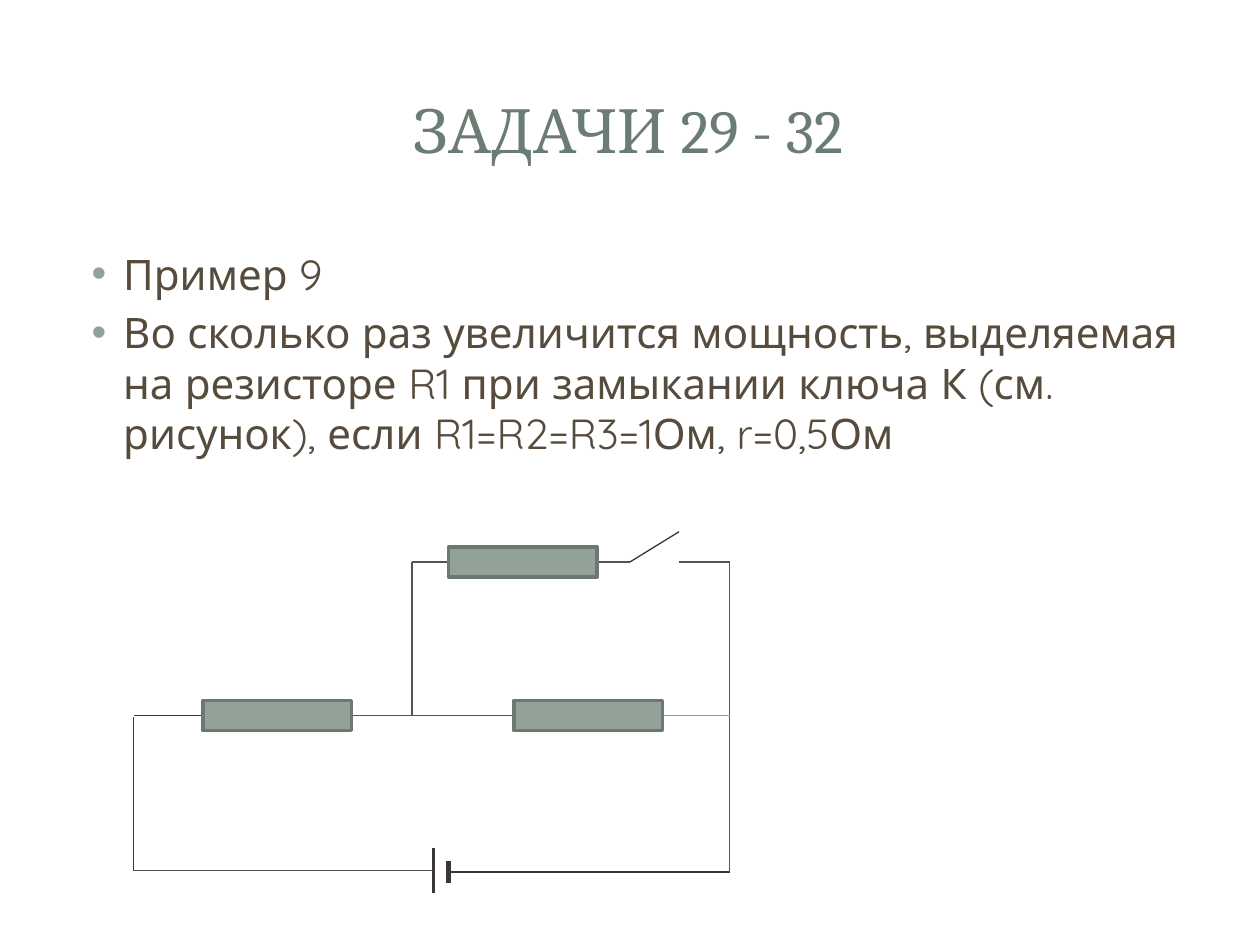
"""Build the slide with a circuit problem: a battery, three resistors and a switch."""
from dataclasses import dataclass

from lxml.etree import SubElement
from pptx import Presentation
from pptx.dml.color import RGBColor
from pptx.enum.shapes import MSO_CONNECTOR, MSO_SHAPE
from pptx.enum.text import MSO_ANCHOR, MSO_AUTO_SIZE, PP_ALIGN
from pptx.oxml.ns import qn
from pptx.slide import Slide
from pptx.text.text import _Paragraph
from pptx.util import Inches, Pt


@dataclass(frozen=True)
class Theme:
    title: str = "6B7D72"
    body: str = "564B3C"
    accent: str = "93A299"
    edge: str = "6D7871"
    dark: str = "3C3638"
    wire: str = "5A5155"
    pale: str = "8F9F96"
    title_font: str = "Cambria"
    body_font: str = "Quicksand"
    title_size: float = 35
    body_size: float = 24


@dataclass(frozen=True)
class Wire:
    x1: float
    y1: float
    x2: float
    y2: float
    color: str
    width: float = 0.75


@dataclass(frozen=True)
class Resistor:
    x: float
    y: float
    w: float = 1.18
    h: float = 0.24


T = Theme()
LEFT, NODE, RIGHT = 1.06, 3.27, 5.79
TOP, MID, BOTTOM = 4.46, 5.68, 6.92
PLUS, MINUS = 3.44, 3.56
SWITCH, CONTACT = 5, 5.39

R1, R2, R3 = Resistor(1.61, MID), Resistor(4.08, MID), Resistor(3.56, TOP)
WIRES = [
    Wire(MINUS, BOTTOM, RIGHT, BOTTOM, T.dark),
    Wire(RIGHT, BOTTOM, RIGHT, TOP, T.wire),
    Wire(R2.x + R2.w, MID, RIGHT, MID, T.pale),
    Wire(CONTACT, TOP, RIGHT, TOP, T.wire),
    Wire(PLUS, 6.73, PLUS, 7.09, T.dark, 1.75),
    Wire(MINUS, 6.83, MINUS, 7.01, T.dark, 3.25),
    Wire(PLUS, 6.91, LEFT, 6.91, T.wire),
    Wire(LEFT, 6.91, LEFT, 5.69, T.dark),
    Wire(LEFT, MID, R1.x, MID, T.dark),
    Wire(R1.x + R1.w, MID, R2.x, MID, T.wire),
    Wire(NODE, TOP, NODE, MID, T.wire),
    Wire(NODE, TOP, R3.x, TOP, T.wire),
    Wire(R3.x + R3.w, TOP, SWITCH, TOP, T.wire),
    Wire(SWITCH, TOP, CONTACT, 4.22, T.dark),
]
PROBLEM = [
    "Пример 9",
    "Во сколько раз увеличится мощность, выделяемая на резисторе R1 "
    "при замыкании ключа К (см. рисунок), если R1=R2=R3=1Ом, r=0,5Ом",
]


def rgb(color: str) -> RGBColor:
    return RGBColor.from_string(color)


def style_runs(p: _Paragraph, font: str, size: float, color: str) -> None:
    for r in p.runs:
        r.font.name, r.font.size = font, Pt(size)
        r.font.color.rgb = rgb(color)


def add_bullet(p: _Paragraph) -> None:
    pPr = p._p.get_or_add_pPr()
    pPr.set("marL", str(Inches(0.38)))
    pPr.set("indent", str(Inches(-0.25)))
    SubElement(SubElement(pPr, qn("a:buClr")), qn("a:srgbClr"), val=T.accent)
    SubElement(pPr, qn("a:buFont"), typeface="Arial")
    SubElement(pPr, qn("a:buChar"), char="•")


def add_title(s: Slide, text: str) -> None:
    sp = s.shapes.title
    sp.left, sp.top, sp.width, sp.height = map(Inches, (0.47, 0.45, 9.03, 1.14))
    tf = sp.text_frame
    tf.text = text
    tf.auto_size = MSO_AUTO_SIZE.NONE
    tf.vertical_anchor = MSO_ANCHOR.MIDDLE
    p = tf.paragraphs[0]
    p.alignment = PP_ALIGN.CENTER
    style_runs(p, T.title_font, T.title_size, T.title)


def add_problem(s: Slide, lines: list[str]) -> None:
    tf = s.shapes.add_textbox(*map(Inches, (0.5, 1.92, 9, 4.78))).text_frame
    tf.word_wrap = True
    tf.text = "\n".join(lines)
    for p in tf.paragraphs:
        p.space_before = Pt(T.body_size * 0.2)
        add_bullet(p)
        style_runs(p, T.body_font, T.body_size, T.body)


def add_wire(s: Slide, wire: Wire) -> None:
    ends = map(Inches, (wire.x1, wire.y1, wire.x2, wire.y2))
    cxn = s.shapes.add_connector(MSO_CONNECTOR.STRAIGHT, *ends)
    cxn.line.color.rgb = rgb(wire.color)
    cxn.line.width = Pt(wire.width)
    SubElement(cxn._element.spPr, qn("a:effectLst"))


def add_resistor(s: Slide, res: Resistor) -> None:
    box = map(Inches, (res.x, res.y - res.h / 2, res.w, res.h))
    sp = s.shapes.add_shape(MSO_SHAPE.RECTANGLE, *box)
    sp.shadow.inherit = False
    sp.fill.solid()
    sp.fill.fore_color.rgb = rgb(T.accent)
    sp.line.color.rgb = rgb(T.edge)
    sp.line.width = Pt(2)


def main() -> None:
    prs = Presentation()
    prs.slide_width, prs.slide_height = Inches(10), Inches(7.5)
    s = prs.slides.add_slide(prs.slide_layouts[5])
    add_title(s, "ЗАДАЧИ 29 - 32")
    add_problem(s, PROBLEM)
    for wire in WIRES:
        add_wire(s, wire)
    for res in (R1, R2, R3):
        add_resistor(s, res)
    prs.save("out.pptx")


if __name__ == "__main__":
    main()
